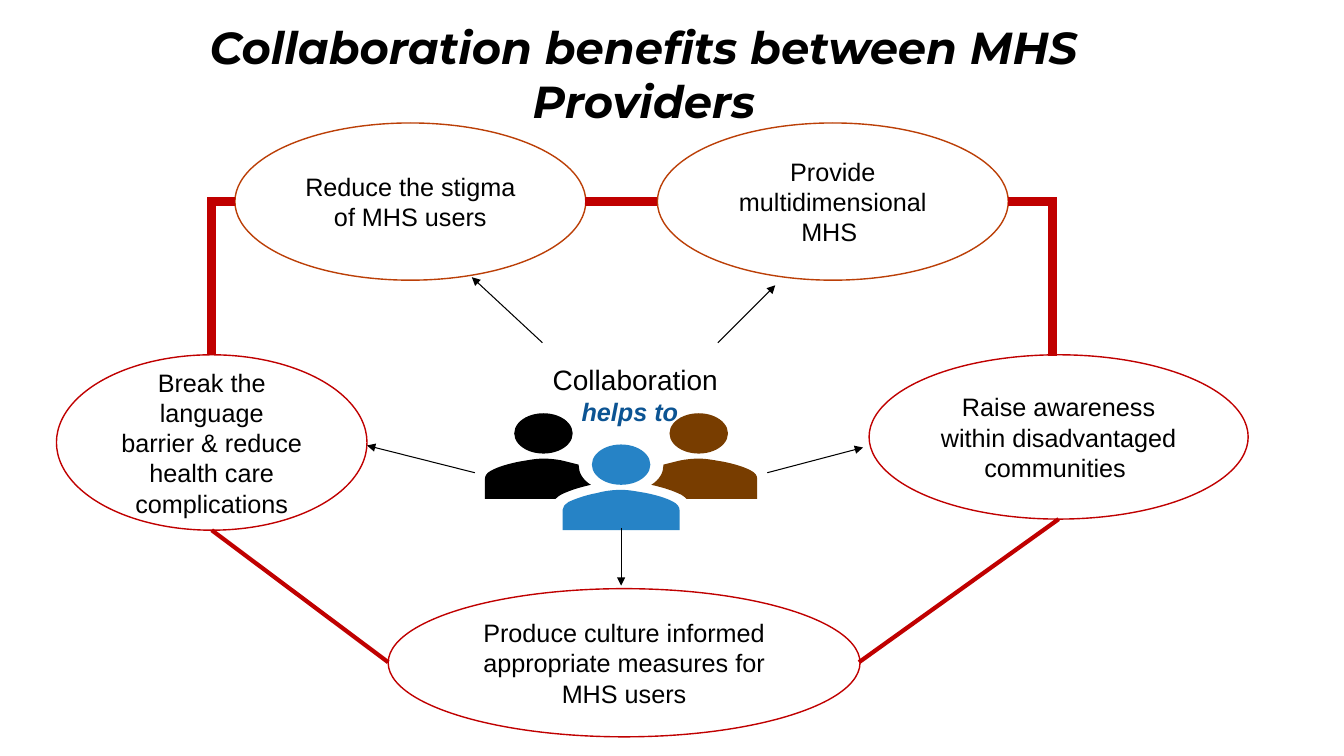
from dataclasses import dataclass

from lxml import etree
from pptx import Presentation
from pptx.dml.color import RGBColor
from pptx.enum.shapes import MSO_CONNECTOR, MSO_SHAPE
from pptx.enum.text import MSO_ANCHOR, PP_ALIGN
from pptx.oxml.ns import qn
from pptx.util import Inches, Pt

OVAL = MSO_SHAPE.OVAL
STRAIGHT, ELBOW = MSO_CONNECTOR.STRAIGHT, MSO_CONNECTOR.ELBOW
TOP, MIDDLE = MSO_ANCHOR.TOP, MSO_ANCHOR.MIDDLE
CENTER = PP_ALIGN.CENTER

BLACK, WHITE, RED, RUST = "000000", "FFFFFF", "C00000", "BB3F07"
BLUE, BROWN, NAVY = "2683C6", "783D00", "0C5493"
AXIS = 6.16  # centre line of the three people

Point = tuple[float, float]
Outline = list[tuple[float, ...]]


@dataclass
class Benefit:
    text: str
    left: float
    top: float
    width: float
    height: float
    color: str = RED


@dataclass
class Link:
    start: Point
    end: Point
    width: float = 0.75
    color: str = BLACK
    arrow: bool = False
    bent: bool = False


@dataclass
class Person:
    head: Point
    color: str
    body: Outline


BENEFITS = [
    Benefit("Reduce the stigma of MHS users", 2.33, 1.22, 3.48, 1.56, RUST),
    Benefit("Break the language\nbarrier & reduce health care complications",
            0.56, 3.52, 3.08, 1.74),
    Benefit("Produce culture informed appropriate measures for MHS users",
            3.85, 5.84, 4.68, 1.47),
    Benefit("Raise awareness within disadvantaged communities ",
            8.62, 3.52, 3.76, 1.63),
    Benefit("Provide multidimensional MHS ", 6.52, 1.22, 3.48, 1.56, RUST),
]

ARROWS = [
    Link(start, end, arrow=True)
    for start, end in [
        ((7.12, 3.4), (7.69, 2.83)),
        ((5.38, 3.4), (4.68, 2.75)),
        ((AXIS, 5.24), (AXIS, 5.81)),
        ((4.71, 4.69), (3.64, 4.42)),
        ((7.61, 4.69), (8.56, 4.44)),
    ]
]

RING = [
    Link((5.8, 2), (6.52, 2), 6, RED),
    Link((2.33, 2), (2.1, 3.52), 6, RED, bent=True),
    Link((10, 2), (10.44, 3.53), 6, RED, bent=True),
    Link((2.1, 5.26), (3.85, 6.57), 3, RED),
    Link((10.5, 5.15), (8.52, 6.57), 3, RED),
]

# Two numbers are a line to a point; six are a Bezier curve.
FRONT = [
    (6.74, 5.26), (6.74, 5.06),
    (6.74, 5.03, 6.72, 5, 6.68, 4.98),
    (6.61, 4.94, 6.5, 4.91, 6.4, 4.89),
    (6.33, 4.88, 6.25, 4.86, 6.16, 4.86),
    (6.09, 4.86, 6, 4.87, 5.93, 4.89),
    (5.82, 4.91, 5.73, 4.94, 5.64, 4.98),
    (5.6, 5.01, 5.58, 5.03, 5.58, 5.06),
    (5.58, 5.26),
]
RIGHT = [
    (7.45, 4.67),
    (7.38, 4.63, 7.27, 4.6, 7.17, 4.58),
    (7.1, 4.57, 7.02, 4.55, 6.93, 4.55),
    (6.86, 4.55, 6.77, 4.56, 6.7, 4.58),
    (6.66, 4.59, 6.62, 4.6, 6.58, 4.61),
    (6.58, 4.62),
    (6.58, 4.69, 6.54, 4.76, 6.46, 4.81),
    (6.59, 4.84, 6.68, 4.87, 6.76, 4.91),
    (6.78, 4.93, 6.8, 4.93, 6.81, 4.95),
    (7.51, 4.95), (7.51, 4.75),
    (7.51, 4.72, 7.49, 4.69, 7.45, 4.67),
]
LEFT = [
    tuple(round(2 * AXIS - n, 2) if i % 2 == 0 else n for i, n in enumerate(step))
    for step in RIGHT
]
PEOPLE = [
    Person((5.1, 4.1), BLACK, LEFT),
    Person((6.64, 4.1), BROWN, RIGHT),
    Person((5.87, 4.41), BLUE, FRONT),
]


def rgb(code: str) -> RGBColor:
    return RGBColor.from_string(code)


def write(para, text: str, *, size: float = 18, font: str = "Arial",
          color: str = BLACK, bold: bool = False, italic: bool = False) -> None:
    para.alignment = CENTER
    run = para.add_run()
    run.text = text
    style = run.font
    style.size, style.name = Pt(size), font
    style.bold, style.italic = bold, italic
    style.color.rgb = rgb(color)


def add_box(slide, left: float, top: float, width: float, height: float, anchor):
    box = slide.shapes.add_textbox(*map(Inches, (left, top, width, height)))
    frame = box.text_frame
    frame.word_wrap = True
    frame.vertical_anchor = anchor
    return frame


def paint(shape, fill: str, line: str | None = None) -> None:
    shape.shadow.inherit = False
    shape.fill.solid()
    shape.fill.fore_color.rgb = rgb(fill)
    if line:
        shape.line.color.rgb = rgb(line)
        shape.line.width = Pt(1)
    else:
        shape.line.fill.background()


def add_oval(slide, left: float, top: float, width: float, height: float):
    return slide.shapes.add_shape(OVAL, *map(Inches, (left, top, width, height)))


def add_benefit(slide, item: Benefit) -> None:
    oval = add_oval(slide, item.left, item.top, item.width, item.height)
    paint(oval, WHITE, item.color)
    frame = oval.text_frame
    frame.word_wrap = True
    frame.vertical_anchor = MIDDLE
    for i, line in enumerate(item.text.split("\n")):
        write(frame.add_paragraph() if i else frame.paragraphs[0], line)


def add_link(slide, link: Link) -> None:
    kind = ELBOW if link.bent else STRAIGHT
    wire = slide.shapes.add_connector(kind, *map(Inches, link.start + link.end))
    wire.line.color.rgb = rgb(link.color)
    wire.line.width = Pt(link.width)
    props = wire.element.spPr
    stroke = props.find(qn("a:ln"))
    etree.SubElement(stroke, qn("a:miter"), lim="800000")
    if link.bent:
        props.find(qn("a:prstGeom")).set("prst", "bentConnector2")
    if link.arrow:
        etree.SubElement(stroke, qn("a:tailEnd"), type="triangle")
    etree.SubElement(props, qn("a:effectLst"))


def add_curved(slide, steps: Outline):
    """Draw a closed outline, joining each three control points into a curve."""
    first, *rest = [
        (Inches(x), Inches(y))
        for step in steps for x, y in zip(step[::2], step[1::2])
    ]
    pen = slide.shapes.build_freeform(*first)
    pen.add_line_segments(rest, close=True)
    shape = pen.convert_to_shape()
    lines = iter(list(shape.element.iter(qn("a:lnTo"))))
    for step in steps[1:]:
        line = next(lines)
        if len(step) == 6:
            line.tag = qn("a:cubicBezTo")
            for _ in range(2):
                knot = next(lines)
                line.append(knot[0])
                knot.getparent().remove(knot)
    return shape


def add_person(slide, person: Person) -> None:
    paint(add_oval(slide, *person.head, 0.58, 0.4), person.color)
    paint(add_curved(slide, person.body), person.color)


def main() -> None:
    deck = Presentation()
    deck.slide_width, deck.slide_height = Inches(13.33), Inches(7.5)
    slide = deck.slides.add_slide(deck.slide_layouts[6])
    title = add_box(slide, 0.93, 0.24, 11.01, 0.98, MIDDLE)
    title.margin_left = 0
    write(title.paragraphs[0], "Collaboration benefits between MHS Providers",
          size=32, font="Montserrat", bold=True, italic=True)
    hub = add_box(slide, 4.44, 3.55, 3.8, 0.74, TOP)
    write(hub.paragraphs[0], "Collaboration ", size=20)
    helps = hub.add_paragraph()
    write(helps, "helps to", color=NAVY, bold=True, italic=True)
    write(helps, "…", font="Roboto", color=NAVY, bold=True)
    for person in PEOPLE:
        add_person(slide, person)
    for item in BENEFITS:
        add_benefit(slide, item)
    for link in ARROWS + RING:
        add_link(slide, link)
    deck.save("out.pptx")


if __name__ == "__main__":
    main()
